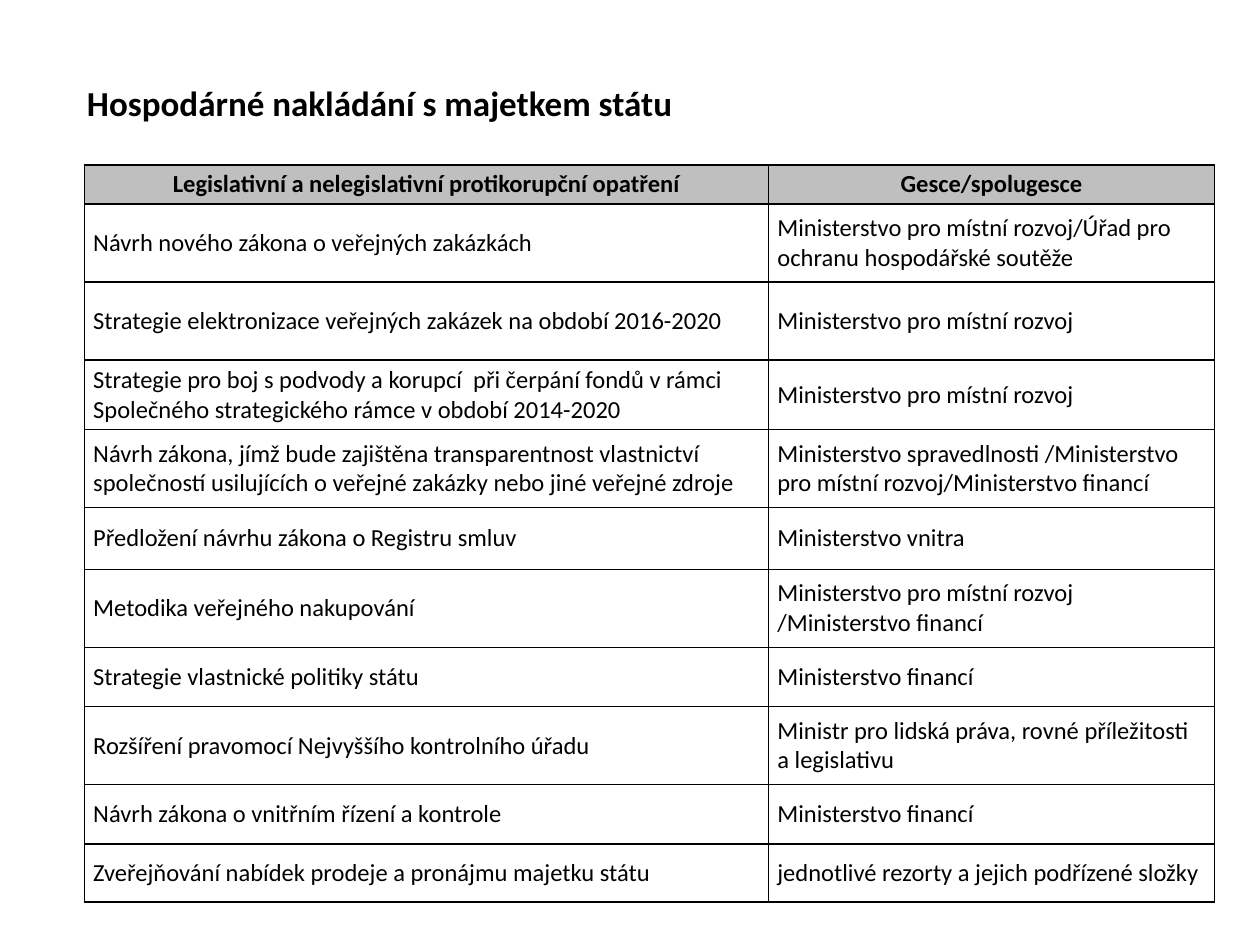
"""Builds a slide listing measures for the economical handling of state property."""
from lxml import etree
from pptx import Presentation
from pptx.dml.color import RGBColor
from pptx.enum import text
from pptx.oxml import ns
from pptx.util import Inches, Pt

COLORS = {"ink": "000000", "header": "BFBFBF"}
FONT = "Calibri"
HEADING = "Hospodárné nakládání s majetkem státu"
HEADERS = ("Legislativní a nelegislativní protikorupční opatření", "Gesce/spolugesce")
MEASURES = [
    ("Návrh nového zákona o veřejných zakázkách",
     "Ministerstvo pro místní rozvoj/Úřad pro ochranu hospodářské soutěže"),
    ("Strategie elektronizace veřejných zakázek na období 2016-2020",
     "Ministerstvo pro místní rozvoj"),
    ("Strategie pro boj s podvody a korupcí  při čerpání fondů v rámci "
     "Společného strategického rámce v období 2014-2020",
     "Ministerstvo pro místní rozvoj"),
    ("Návrh zákona, jímž bude zajištěna transparentnost vlastnictví "
     "společností usilujících o veřejné zakázky nebo jiné veřejné zdroje",
     "Ministerstvo spravedlnosti /Ministerstvo pro místní rozvoj/Ministerstvo financí"),
    ("Předložení návrhu zákona o Registru smluv", "Ministerstvo vnitra"),
    ("Metodika veřejného nakupování",
     "Ministerstvo pro místní rozvoj /Ministerstvo financí"),
    ("Strategie vlastnické politiky státu", "Ministerstvo financí"),
    ("Rozšíření pravomocí Nejvyššího kontrolního úřadu",
     "Ministr pro lidská práva, rovné příležitosti a legislativu"),
    ("Návrh zákona o vnitřním řízení a kontrole", "Ministerstvo financí"),
    ("Zveřejňování nabídek prodeje a pronájmu majetku státu",
     "jednotlivé rezorty a jejich podřízené složky"),
]
COLUMN_WIDTHS = (5.43, 3.54)
ROW_HEIGHTS = (0.31, 0.62, 0.62, 0.55, 0.62, 0.49, 0.62, 0.47, 0.62, 0.47, 0.46)


def write(frame, wording, size=14, bold=False, align=text.PP_ALIGN.LEFT):
    frame.word_wrap = True
    paragraph = frame.paragraphs[0]
    paragraph.alignment = align
    run = paragraph.add_run()
    run.text = wording
    run.font.name = FONT
    run.font.size = Pt(size)
    run.font.bold = bold
    run.font.color.rgb = RGBColor.from_string(COLORS["ink"])


def add_borders(cell):
    properties = cell._tc.get_or_add_tcPr()
    for position, side in enumerate(("lnL", "lnR", "lnT", "lnB")):
        border = etree.Element(ns.qn(f"a:{side}"), w=str(Pt(1)))
        fill = etree.SubElement(border, ns.qn("a:solidFill"))
        etree.SubElement(fill, ns.qn("a:srgbClr"), val=COLORS["ink"])
        properties.insert(position, border)


def format_cell(cell, wording, is_header):
    cell.margin_left = cell.margin_right = Inches(0.07)
    cell.margin_top = cell.margin_bottom = 0
    cell.vertical_anchor = text.MSO_ANCHOR.MIDDLE
    if is_header:
        cell.fill.solid()
        cell.fill.fore_color.rgb = RGBColor.from_string(COLORS["header"])
    else:
        cell.fill.background()
    align = text.PP_ALIGN.CENTER if is_header else text.PP_ALIGN.LEFT
    write(cell.text_frame, wording, bold=is_header, align=align)
    add_borders(cell)


def main():
    deck = Presentation()
    deck.slide_width, deck.slide_height = Inches(10), Inches(7.5)
    slide = deck.slides.add_slide(deck.slide_layouts[5])

    heading = slide.shapes.title
    heading.left, heading.top = Inches(0.59), Inches(0.6)
    heading.width, heading.height = Inches(9), Inches(0.5)
    heading.text_frame.vertical_anchor = text.MSO_ANCHOR.TOP
    write(heading.text_frame, HEADING, size=20, bold=True)

    rows = [HEADERS, *MEASURES]
    measures = slide.shapes.add_table(
        len(rows), len(HEADERS), Inches(0.67), Inches(1.31),
        Inches(sum(COLUMN_WIDTHS)), Inches(sum(ROW_HEIGHTS))).table
    measures.horz_banding = False
    for column, width in zip(measures.columns, COLUMN_WIDTHS):
        column.width = Inches(width)
    for index, (row, height, wordings) in enumerate(zip(measures.rows, ROW_HEIGHTS, rows)):
        row.height = Inches(height)
        for cell, wording in zip(row.cells, wordings):
            format_cell(cell, wording, is_header=index == 0)

    deck.save("out.pptx")


if __name__ == "__main__":
    main()
